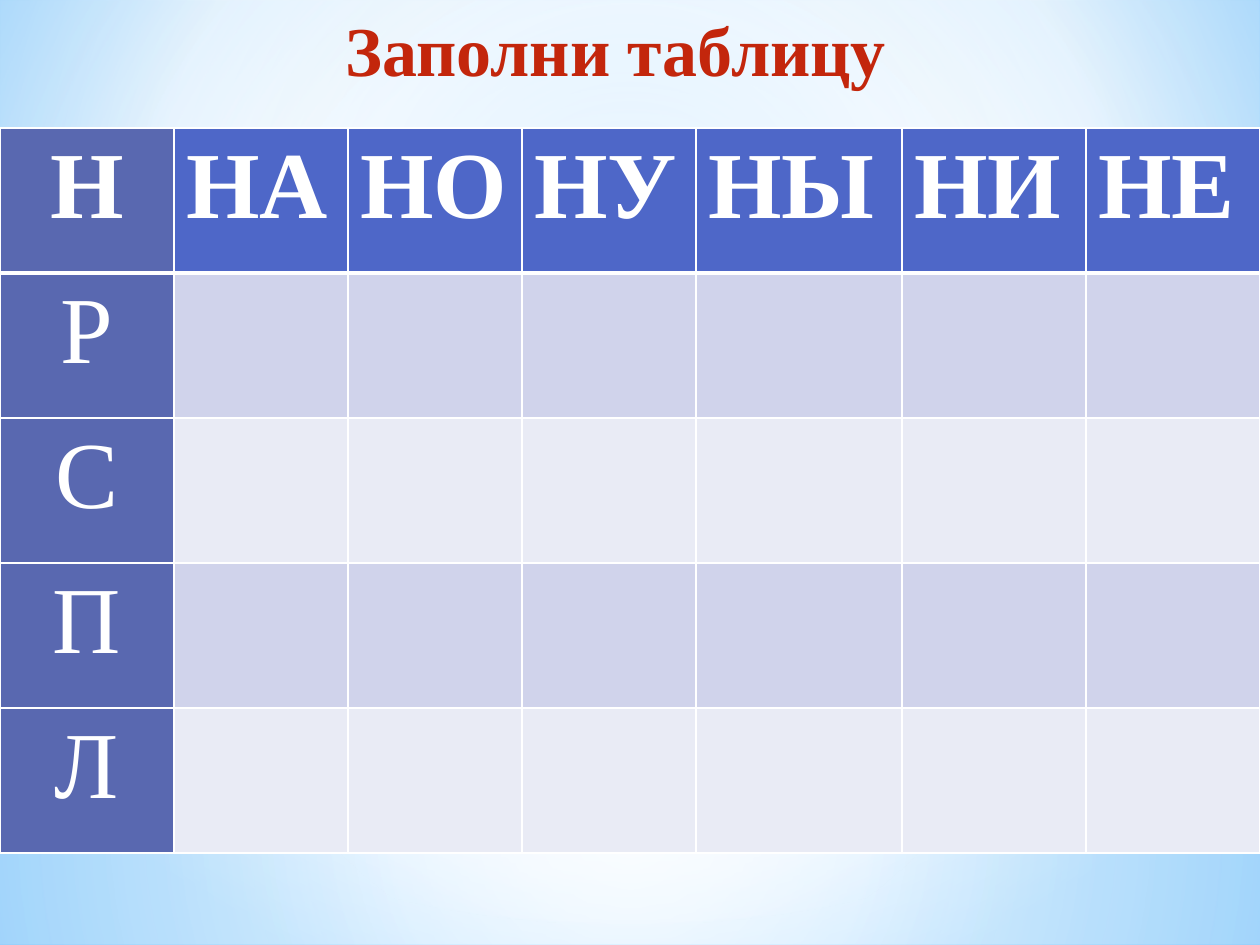
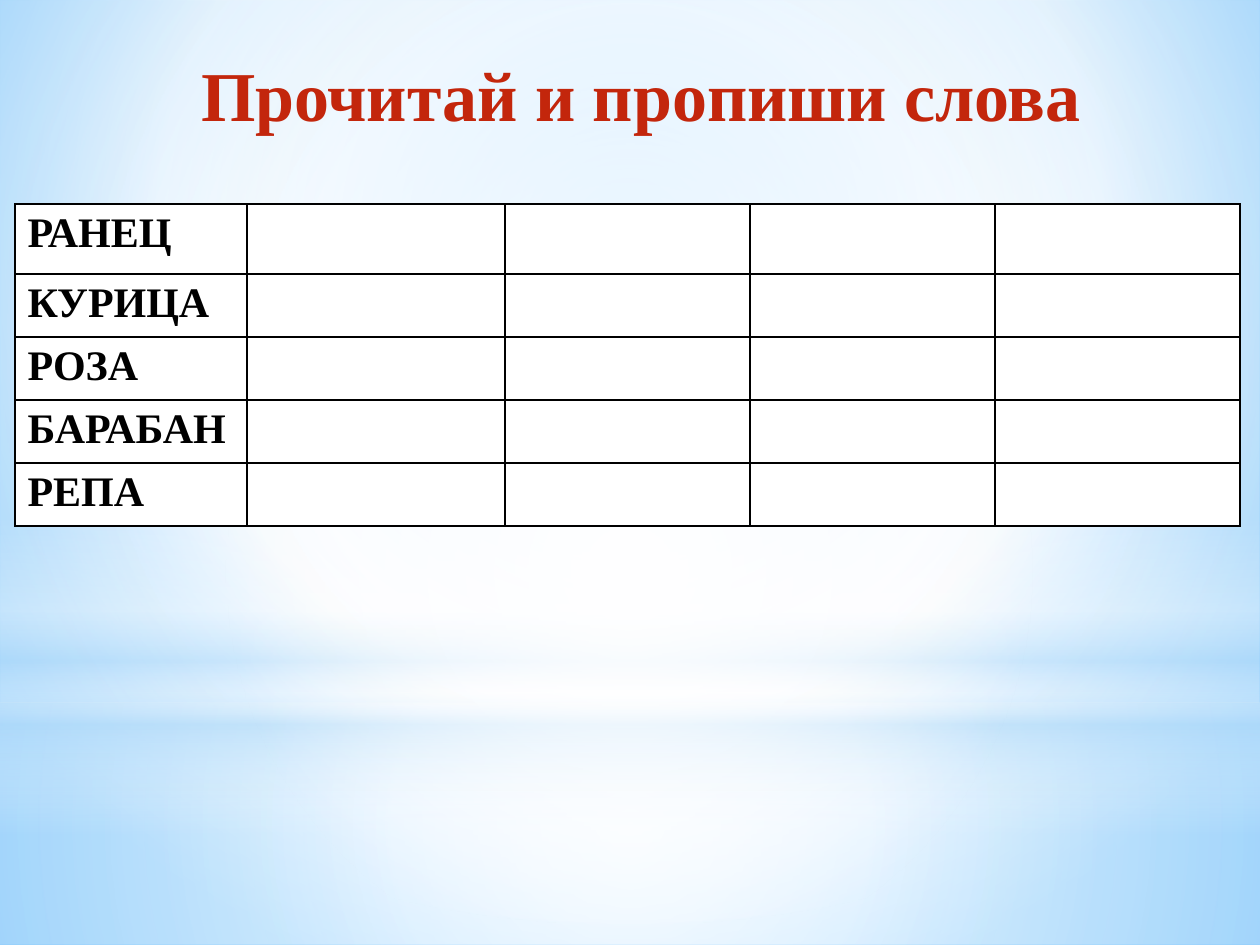
"""Build two reading-practice slides: a syllable table and a word-writing table."""
from dataclasses import dataclass

from pptx import Presentation
from pptx.dml.color import RGBColor
from pptx.enum.shapes import MSO_SHAPE
from pptx.enum.text import MSO_AUTO_SIZE, PP_ALIGN
from pptx.oxml import parse_xml
from pptx.oxml.ns import nsdecls, qn
from pptx.util import Emu, Pt

RECTANGLE, ELLIPSE = MSO_SHAPE.RECTANGLE, MSO_SHAPE.OVAL
LEFT, CENTER = PP_ALIGN.LEFT, PP_ALIGN.CENTER
FIT_SHAPE = MSO_AUTO_SIZE.SHAPE_TO_FIT_TEXT
EMU_PER_PX = 914400 / 126
WIDTH, HEIGHT = 1260, 945
BLANK_LAYOUT = 6


@dataclass(frozen=True)
class TableLook:
    side: str
    header: str
    bands: tuple
    text: str
    border: str
    size: int
    header_rule: int
    side_align: PP_ALIGN
    side_bold: bool


@dataclass(frozen=True)
class Theme:
    font: str = "Times New Roman"
    title: str = "C3260C"
    title_size: int = 40
    white: str = "FFFFFF"
    mist: str = "B4DCFA"
    sky: str = "9ED5FF"
    deep_sky: str = "5BB9FF"
    syllables: TableLook = TableLook(
        side="5968B0", header="4E67C8", bands=("D0D3EB", "E9EBF5"), text="FFFFFF",
        border="FFFFFF", size=54, header_rule=3, side_align=CENTER, side_bold=False)
    words: TableLook = TableLook(
        side="FFFFFF", header="FFFFFF", bands=("FFFFFF", "FFFFFF"), text="000000",
        border="000000", size=24, header_rule=1, side_align=LEFT, side_bold=True)


def px(length):
    return Emu(round(length * EMU_PER_PX))


def gradient(stops, focus=None):
    stop_xml = "".join(
        f'<a:gs pos="{pos * 1000}"><a:srgbClr val="{color}">'
        f'<a:alpha val="{alpha * 1000}"/></a:srgbClr></a:gs>'
        for pos, color, alpha in stops)
    direction = '<a:lin ang="5400000" scaled="0"/>'
    if focus:
        edges = " ".join(f'{side}="{inset * 1000}"' for side, inset in zip("ltrb", focus))
        direction = f'<a:path path="circle"><a:fillToRect {edges}/></a:path>'
    return parse_xml(f'<a:gradFill {nsdecls("a")} rotWithShape="1">'
                     f'<a:gsLst>{stop_xml}</a:gsLst>{direction}</a:gradFill>')


def set_gradient(owner, stops, focus=None):
    owner.fill.background()


class Deck:
    def __init__(self, theme):
        self.theme = theme
        self.presentation = Presentation()
        self.presentation.slide_width = px(WIDTH)
        self.presentation.slide_height = px(HEIGHT)
        self.slide = None

    def new_slide(self):
        layout = self.presentation.slide_layouts[BLANK_LAYOUT]
        self.slide = self.presentation.slides.add_slide(layout)
        self.backdrop()

    def paint(self, fill, element, stops, focus=None):
        fill.background()
        empty_fill = next(element.iter(qn("a:noFill")))
        empty_fill.getparent().replace(empty_fill, gradient(stops, focus))

    def glow(self, kind, top, height, stops, focus=None):
        layer = self.slide.shapes.add_shape(kind, 0, px(top), px(WIDTH), px(height))
        layer.shadow.inherit = False
        self.paint(layer.fill, layer.element, stops, focus)
        layer.line.fill.background()

    def backdrop(self):
        white, mist = self.theme.white, self.theme.mist
        middle = (50, 50, 50, 50)
        self.paint(self.slide.background.fill, self.slide.element,
                   [(0, self.theme.sky, 100), (60, white, 100), (100, self.theme.deep_sky, 100)],
                   (20, 10, 20, 60))
        self.glow(RECTANGLE, 703, 242,
                  [(0, white, 91), (37, white, 76), (100, mist, 79)], middle)
        self.glow(RECTANGLE, 0, 703,
                  [(0, white, 89), (48, white, 62), (100, mist, 79)], middle)
        self.glow(RECTANGLE, 519, 315,
                  [(0, white, 0), (29, white, 30), (45, mist, 40),
                   (55, white, 26), (65, mist, 60), (100, white, 0)])
        self.glow(ELLIPSE, 220, 703, [(0, white, 100), (56, white, 0)], middle)

    def style(self, paragraph, size, color, bold, align):
        paragraph.alignment = align
        font = paragraph.font
        font.name, font.size, font.bold = self.theme.font, Pt(size), bold
        font.color.rgb = RGBColor.from_string(color)

    def title(self, text, left, top, width, align=LEFT):
        box = self.slide.shapes.add_textbox(px(left), px(top), px(width), px(97))
        frame = box.text_frame
        frame.word_wrap, frame.auto_size = True, FIT_SHAPE
        frame.text = text
        self.style(frame.paragraphs[0], self.theme.title_size, self.theme.title, True, align)

    def borders(self, cell, color, top, bottom):
        properties = cell._tc.get_or_add_tcPr()
        for index, (side, points) in enumerate(zip("LRTB", (1, 1, top, bottom))):
            properties.insert(index, parse_xml(
                f'<a:ln{side} {nsdecls("a")} w="{Pt(points)}"><a:solidFill>'
                f'<a:srgbClr val="{color}"/></a:solidFill></a:ln{side}>'))

    def table(self, left, top, widths, heights, header, side, look):
        grid = self.slide.shapes.add_table(
            len(heights), len(widths), px(left), px(top),
            px(sum(widths)), px(sum(heights))).table
        grid.first_row = grid.horz_banding = False
        for column, width in zip(grid.columns, widths):
            column.width = px(width)
        for row, height in zip(grid.rows, heights):
            row.height = px(height)
        for r in range(len(heights)):
            for c in range(len(widths)):
                cell = grid.cell(r, c)
                if c == 0:
                    color, text = look.side, side[r]
                elif r == 0:
                    color, text = look.header, header[c - 1] if header else ""
                else:
                    color, text = look.bands[(r - 1) % 2], ""
                cell.fill.solid()
                cell.fill.fore_color.rgb = RGBColor.from_string(color)
                self.borders(cell, look.border,
                             top=look.header_rule if r == 1 else 1,
                             bottom=look.header_rule if r == 0 else 1)
                if text:
                    cell.text = text
                    self.style(cell.text_frame.paragraphs[0], look.size, look.text,
                               r == 0 or look.side_bold,
                               look.side_align if c == 0 else LEFT)


def main():
    theme = Theme()
    deck = Deck(theme)

    deck.new_slide()
    deck.title("Заполни таблицу", 333, 0, 576)
    deck.table(0, 128, [174] * 4 + [206, 184, 174], [145] * 5,
               ["НА", "НО", "НУ", "НЫ", "НИ", "НЕ"], ["Н", "Р", "С", "П", "Л"],
               theme.syllables)

    deck.new_slide()
    deck.table(15, 204, [232, 258] + [245] * 3, [70] + [63] * 4,
               [], ["РАНЕЦ", "КУРИЦА", "РОЗА", "БАРАБАН", "РЕПА"], theme.words)
    deck.title("Прочитай и пропиши слова", 115, 45, 1052, CENTER)

    deck.presentation.save("out.pptx")


if __name__ == "__main__":
    main()
